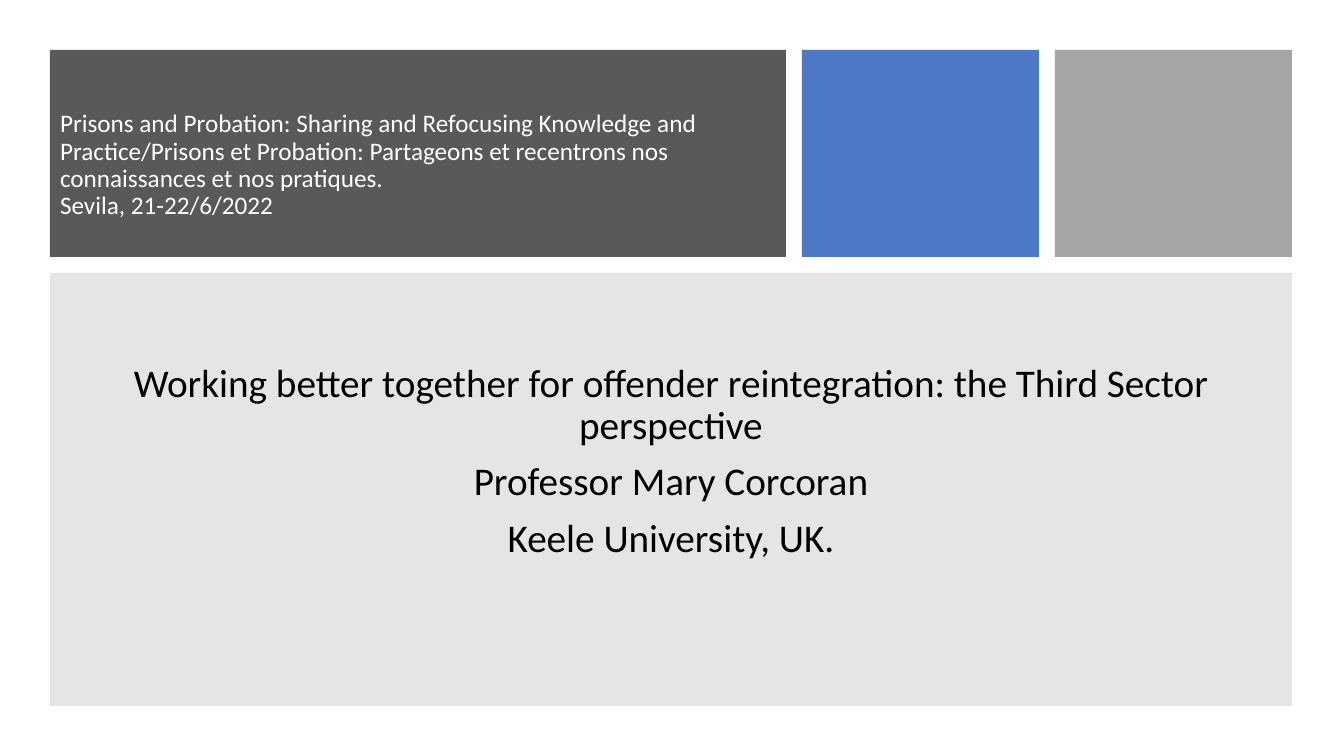
from lxml import etree
from pptx import Presentation, util as u
from pptx.dml.color import RGBColor
from pptx.enum import shapes, text
from pptx.oxml.ns import qn

WIDTH, HEIGHT = 1344, 756
SCALE = 12192000 / WIDTH
MARGIN, GAP = 50, 16
HEADER_HEIGHT, TILE_WIDTH = 207, 237


def px(length):
    return u.Emu(round(length * SCALE))


def colour(code):
    return RGBColor.from_string(code)


def add_panel(page, box, fill, opacity=100):
    panel = page.shapes.add_shape(shapes.MSO_SHAPE.RECTANGLE, *map(px, box))
    panel.shadow.inherit = False
    panel.line.fill.background()
    panel.fill.solid()
    panel.fill.fore_color.rgb = colour(fill)
    if opacity < 100:
        tint = panel._element.spPr.find(qn("a:solidFill"))[0]
        etree.SubElement(tint, qn("a:alpha"), val=str(opacity * 1000))


def write_text(shape, paragraphs, size, ink, align, anchor, before=0, top=5, bottom=5):
    frame = shape.text_frame
    frame.word_wrap = True
    frame.auto_size = text.MSO_AUTO_SIZE.NONE
    frame.vertical_anchor = anchor
    frame.margin_left = frame.margin_right = px(10)
    frame.margin_top, frame.margin_bottom = px(top), px(bottom)
    frame.text = "\n".join(paragraphs)
    for para in frame.paragraphs:
        para.alignment = align
        para.line_spacing = 0.9
        para.space_before = u.Pt(before)
        for span in para.runs:
            span.font.name = "Calibri"
            span.font.size = u.Pt(size)
            span.font.color.rgb = colour(ink)


def add_header(page, left, top, width, height):
    # Dark title panel, then two colour tiles to its right
    title_width = width - 2 * (TILE_WIDTH + GAP)
    add_panel(page, (left, top, title_width, height), "595959")
    tile_left = left + title_width + GAP
    for fill, opacity in (("4472C4", 95), ("A5A5A5", 100)):
        add_panel(page, (tile_left, top, TILE_WIDTH, height), fill, opacity)
        tile_left += TILE_WIDTH + GAP

    # Event title; \v is a line break within the paragraph
    title = page.shapes.title
    title.left, title.top = px(left), px(top)
    title.width, title.height = px(title_width - 65), px(height - 50)
    event = ("Prisons and Probation: Sharing and Refocusing Knowledge and "
             "Practice/Prisons et Probation: Partageons et recentrons nos "
             "connaissances et nos pratiques.\vSevila, 21-22/6/2022")
    write_text(title, [event], size=18, ink="FFFFFF", align=text.PP_ALIGN.LEFT,
               anchor=text.MSO_ANCHOR.TOP, top=61, bottom=0)


def add_talk(page, left, top, width, height):
    # Pale panel with the talk, speaker and university
    add_panel(page, (left, top, width, height), "808080", 20)
    inset = 36
    box = (left + inset, top + inset, width - 2 * inset, height - 2 * inset)
    talk = page.shapes.add_textbox(*map(px, box))
    lines = ["Working better together for offender reintegration: the Third Sector perspective",
             "Professor Mary Corcoran",
             "Keele University, UK."]
    write_text(talk, lines, size=28, ink="000000", align=text.PP_ALIGN.CENTER,
               anchor=text.MSO_ANCHOR.MIDDLE, before=10, bottom=60)


def main():
    deck = Presentation()
    deck.slide_width, deck.slide_height = px(WIDTH), px(HEIGHT)
    page = deck.slides.add_slide(deck.slide_layouts.get_by_name("Title Only"))
    page.background.fill.solid()
    page.background.fill.fore_color.rgb = colour("FFFFFF")

    width = WIDTH - 2 * MARGIN - 2
    talk_top = MARGIN + HEADER_HEIGHT + GAP
    add_header(page, MARGIN, MARGIN, width, HEADER_HEIGHT)
    add_talk(page, MARGIN, talk_top, width, HEIGHT - MARGIN - talk_top)

    # Keep the title in front of its panel
    tree = page.shapes._spTree
    tree.append(page.shapes.title._element)
    deck.save("out.pptx")


if __name__ == "__main__":
    main()
